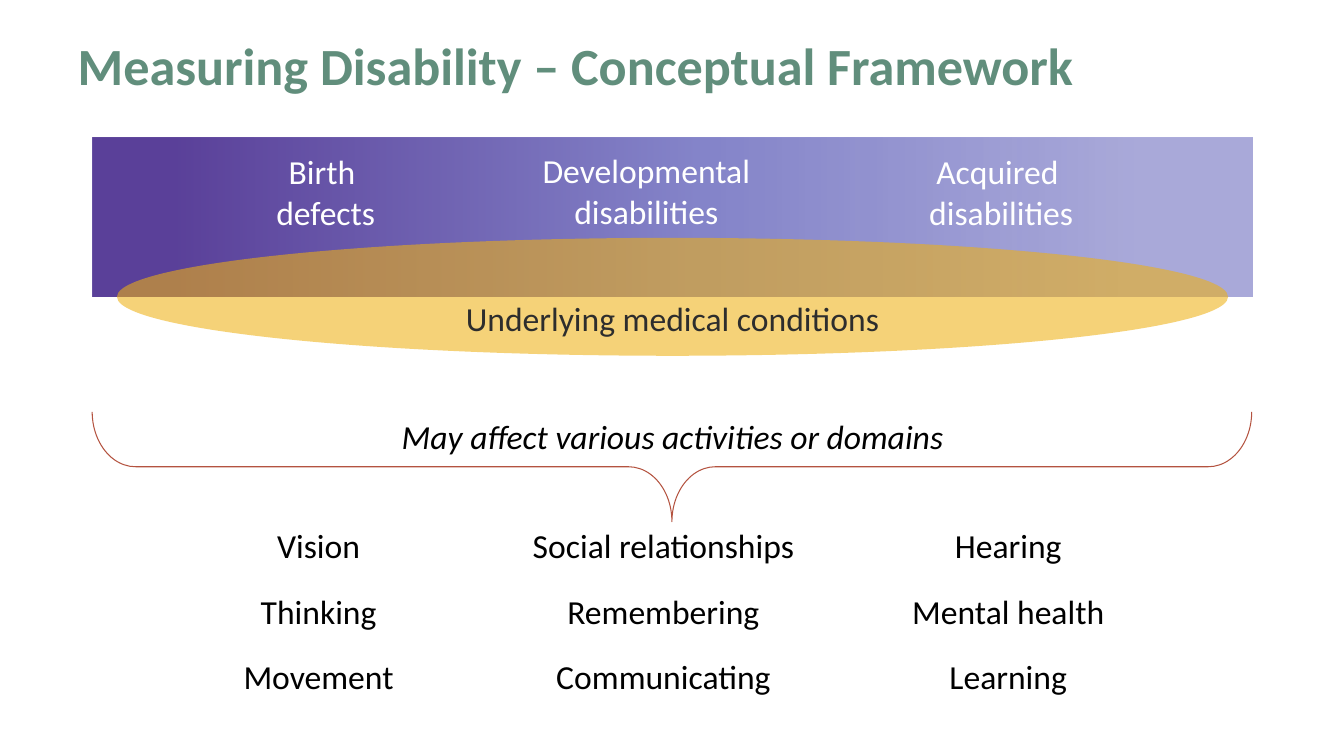
"""Build the slide 'Measuring Disability – Conceptual Framework'."""
from copy import deepcopy

from pptx import Presentation
from pptx.dml.color import RGBColor
from pptx.enum.shapes import MSO_SHAPE as Shape
from pptx.enum.text import MSO_ANCHOR as Anchor, PP_ALIGN as Align
from pptx.oxml.ns import qn
from pptx.oxml.xmlchemy import OxmlElement
from pptx.util import Inches, Pt

LEFT, WIDTH = 0.92, 11.5
BLACK, WHITE = "000000", "FFFFFF"


def set_color(target, value, alpha=None):
    target.rgb = RGBColor.from_string(value)
    if alpha is not None:
        node = OxmlElement("a:alpha")
        node.set("val", str(alpha * 1000))
        target._xFill.find(qn("a:srgbClr")).append(node)


def write(frame, lines, color, size=24, align=Align.CENTER, bold=False, italic=False):
    frame.word_wrap = True
    for index, line in enumerate(lines):
        para = frame.add_paragraph() if index else frame.paragraphs[0]
        para.alignment = align
        span = para.add_run()
        span.text = line
        span.font.name = "Calibri"
        span.font.size = Pt(size)
        span.font.bold = bold
        span.font.italic = italic
        set_color(span.font.color, color)


deck = Presentation()
deck.slide_width, deck.slide_height = Inches(13.33), Inches(7.5)
page = deck.slides.add_slide(deck.slide_layouts[5])
shapes = page.shapes

title = shapes.title
title.left, title.top, title.width, title.height = map(Inches, (0.67, 0.3, 12, 0.7))
title.text_frame.vertical_anchor = Anchor.BOTTOM
write(title.text_frame, ["Measuring Disability – Conceptual Framework"], "618E7C",
      size=37.3, align=Align.LEFT, bold=True)
title.text_frame.paragraphs[0].line_spacing = Pt(40)

domains = [
    ["Vision", "Social relationships", "Hearing"],
    ["Thinking", "Remembering", "Mental health"],
    ["Movement", "Communicating", "Learning"],
]
for row, names in enumerate(domains):
    for column, name in enumerate(names):
        box = shapes.add_textbox(Inches(1.56 + 3.42 * column), Inches(5.16 + 0.65 * row),
                                 Inches(3.2), Inches(0.5))
        write(box.text_frame, [name], BLACK)

band = shapes.add_shape(Shape.RECTANGLE, Inches(LEFT), Inches(1.36), Inches(WIDTH), Inches(1.58))
band.shadow.inherit = False
band.line.fill.background()
band.fill.gradient()
band.fill.gradient_angle = 0
stop_list = band._element.spPr.find(qn("a:gradFill")).find(qn("a:gsLst"))
stop_list.append(deepcopy(stop_list[-1]))
gradient = [(0.07, "5A4099", None), (0.52, "8484C9", None), (0.9, "8484C9", 69)]
for stop, (position, color, alpha) in zip(band.fill.gradient_stops, gradient):
    stop.position = position
    stop.color.rgb = RGBColor.from_string(color)
    if alpha:
        node = OxmlElement("a:alpha")
        node.set("val", str(alpha * 1000))
        stop_list[-1].find(qn("a:srgbClr")).append(node)

conditions = shapes.add_shape(Shape.OVAL, Inches(1.16), Inches(2.36), Inches(11.02), Inches(1.17))
conditions.shadow.inherit = False
conditions.line.fill.background()
conditions.fill.solid()
set_color(conditions.fill.fore_color, "EFB112")
node = OxmlElement("a:alpha")
node.set("val", "57000")
conditions._element.spPr.find(qn("a:solidFill")).find(qn("a:srgbClr")).append(node)
conditions.text_frame.vertical_anchor = Anchor.BOTTOM
conditions.text_frame.margin_top = conditions.text_frame.margin_bottom = 0
write(conditions.text_frame, ["Underlying medical conditions"], "2D2D2D")

origins = [
    (1.47, 1.45, ["Birth ", "defects"]),
    (4.65, 1.44, ["Developmental disabilities"]),
    (8.17, 1.45, ["Acquired ", "disabilities"]),
]
for left, top, lines in origins:
    box = shapes.add_textbox(Inches(left), Inches(top), Inches(3.52), Inches(0.91))
    write(box.text_frame, lines, WHITE)

brace = shapes.add_shape(Shape.LEFT_BRACE, Inches(6.12), Inches(-1.12), Inches(1.09), Inches(WIDTH))
brace.rotation = 270
brace.adjustments[0], brace.adjustments[1] = 0.395, 0.5
brace.shadow.inherit = False
brace.fill.background()
brace.line.width = Pt(0.75)
set_color(brace.line.color, "B45340")

effect = shapes.add_textbox(Inches(LEFT), Inches(4.08), Inches(WIDTH), Inches(0.5))
write(effect.text_frame, ["May affect various activities or domains"], BLACK, italic=True)

deck.save("out.pptx")
